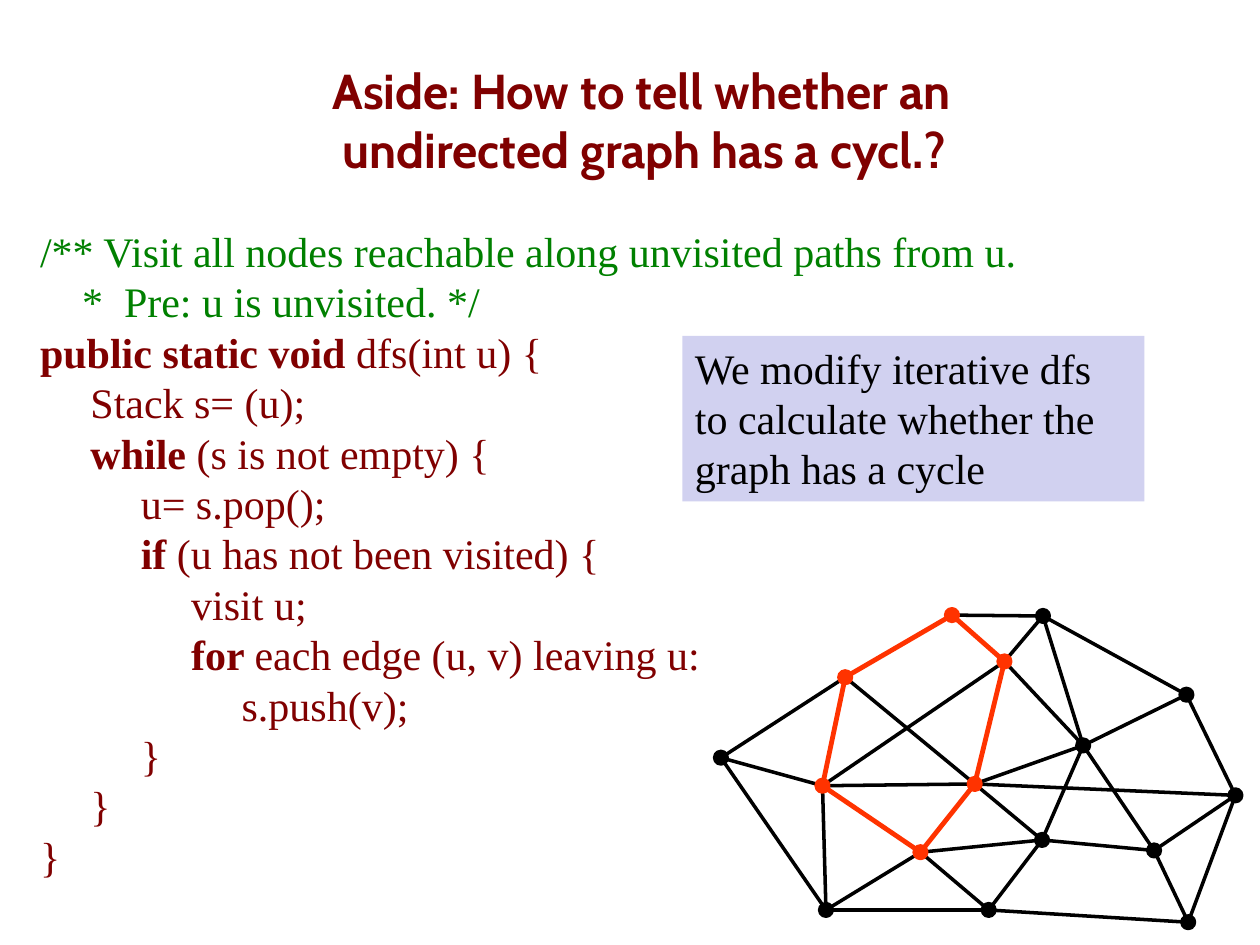
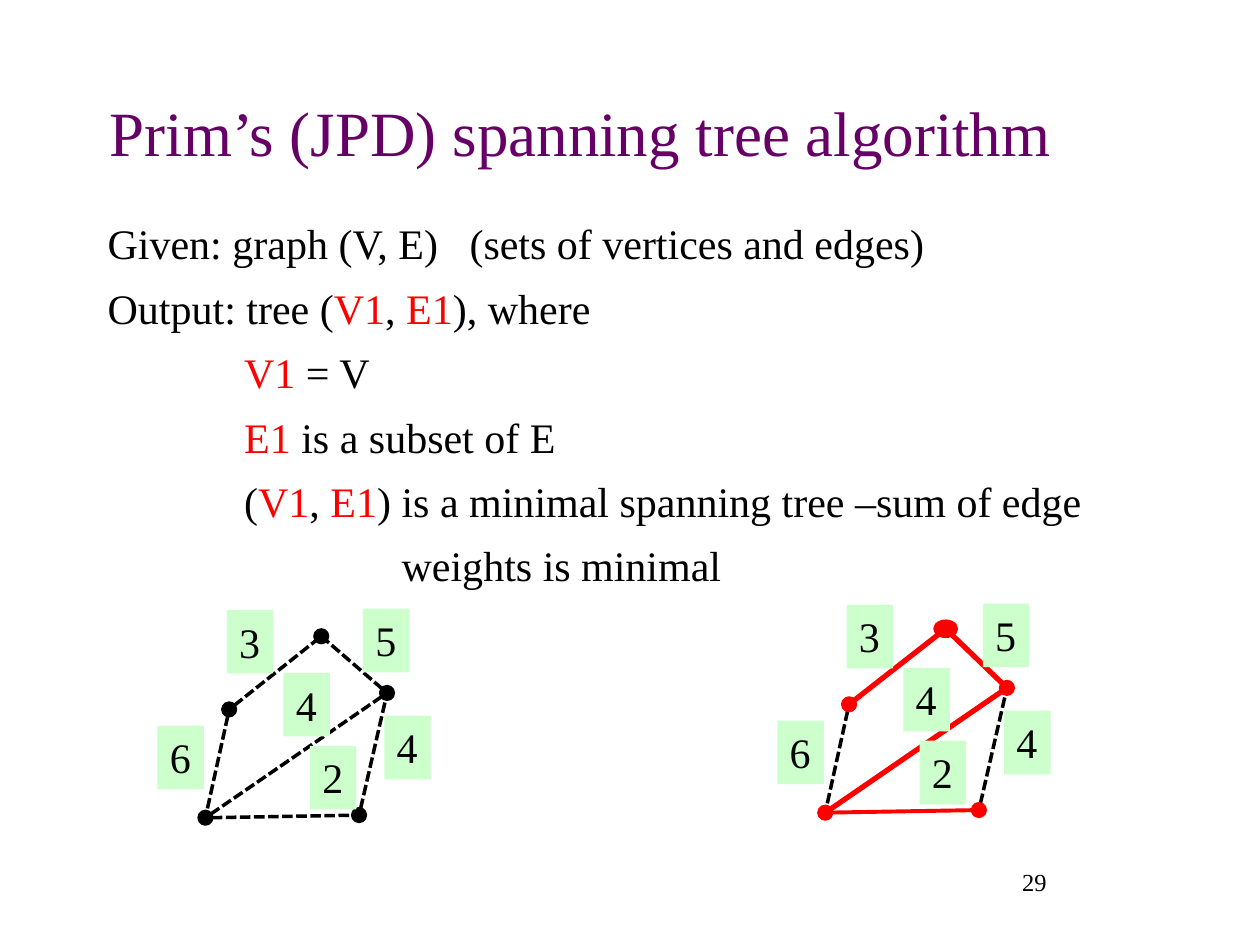
from math import hypot

from pptx import Presentation
from pptx.dml.color import RGBColor
from pptx.enum.dml import MSO_LINE
from pptx.enum.shapes import MSO_CONNECTOR, MSO_SHAPE
from pptx.enum.text import MSO_ANCHOR, MSO_AUTO_SIZE, PP_ALIGN
from pptx.oxml.xmlchemy import OxmlElement
from pptx.util import Pt

BLACK = RGBColor(0x00, 0x00, 0x00)
RED = RGBColor(0xFF, 0x00, 0x00)
ORANGE = RGBColor(0xFF, 0x33, 0x00)
MAROON = RGBColor(0x80, 0x00, 0x00)
GREEN = RGBColor(0x00, 0x80, 0x00)
PURPLE = RGBColor(0x66, 0x00, 0x66)
LAVENDER = RGBColor(0xD1, 0xD1, 0xF0)
MINT = RGBColor(0xCC, 0xFF, 0xCC)

SERIF = "Times New Roman"
BOX_MARGINS = {"margin_left": Pt(4.5), "margin_top": Pt(4.5),
               "margin_right": Pt(7.2), "margin_bottom": Pt(4.5),
               "word_wrap": True, "auto_size": MSO_AUTO_SIZE.NONE}
DOT = 7.2


def write(paragraph, runs, color=BLACK, left=0, hanging=0, **font_format):
    """Fill a paragraph with (text, bold, colour) runs and set its indent."""
    properties = paragraph._p.get_or_add_pPr()
    properties.set("marL", str(Pt(left)))
    properties.set("indent", str(Pt(hanging)))
    for text, bold, run_color in runs:
        run = paragraph.add_run()
        run.text = text
        settings = {"name": SERIF, "size": Pt(24), "bold": bold} | font_format
        for attribute, value in settings.items():
            setattr(run.font, attribute, value)
        run.font.color.rgb = run_color or color


def draw_graph(slide, nodes, edges):
    """Nodes map a letter to (x, y, colour, width, height); edges are
    (letter pair, colour, line width, dash) and stop at the rim of a node."""
    for (start, end), color, width, dash in edges:
        x1, y1 = nodes[start][:2]
        x2, y2 = nodes[end][:2]
        share = DOT / 2 / hypot(x2 - x1, y2 - y1)
        dx, dy = (x2 - x1) * share, (y2 - y1) * share
        edge = slide.shapes.add_connector(
            MSO_CONNECTOR.STRAIGHT, Pt(x1 + dx), Pt(y1 + dy), Pt(x2 - dx), Pt(y2 - dy))
        edge.line.color.rgb = color
        edge.line.width = Pt(width)
        if dash:
            edge.line.dash_style = dash
        edge._element.spPr.append(OxmlElement("a:effectLst"))
    for x, y, color, width, height in nodes.values():
        node = slide.shapes.add_shape(
            MSO_SHAPE.OVAL, Pt(x - width / 2), Pt(y - height / 2), Pt(width), Pt(height))
        node.shadow.inherit = False
        node.fill.solid()
        node.fill.fore_color.rgb = color
        node.line.color.rgb = color
        node.line.width = Pt(2)


presentation = Presentation()
presentation.slide_width = Pt(720)
presentation.slide_height = Pt(540)
content_layout, title_layout = presentation.slide_layouts[1], presentation.slide_layouts[5]

# Titles
TITLES = [
    (title_layout, (48.2, 36, 642.2, 64.8), 10, MAROON,
     ["Aside: How to tell whether an", "undirected graph has a cycl.?"],
     {"name": "Cabin", "size": Pt(28), "bold": True}),
    (content_layout, (54, 30.2, 558, 90), 7.2, PURPLE,
     ["Prim’s (JPD) spanning tree algorithm"], {"size": Pt(36)}),
]
slides = []
for layout, place, right_margin, color, lines, font_format in TITLES:
    slide = presentation.slides.add_slide(layout)
    slides.append(slide)
    title = slide.shapes.title
    title.left, title.top, title.width, title.height = map(Pt, place)
    frame_format = BOX_MARGINS | {"margin_right": Pt(right_margin),
                                  "vertical_anchor": MSO_ANCHOR.MIDDLE}
    for attribute, value in frame_format.items():
        setattr(title.text_frame, attribute, value)
    paragraph = title.text_frame.paragraphs[0]
    paragraph.alignment = PP_ALIGN.CENTER
    for number, line in enumerate(lines):
        if number:
            paragraph.add_line_break()
        write(paragraph, [(line, False, None)], color, 3, -3, **font_format)
cycle_slide, prim_slide = slides

# Depth-first search code: indent, bold keyword, rest of the line
TAB = 28.8
CODE = [
    (0, "public static void ", "dfs(int u) {"),
    (1, "", "Stack s= (u);"),
    (1, "while", " (s is not empty) {"),
    (2, "", "u= s.pop();"),
    (2, "if", " (u has not been visited) {"),
    (3, "", "visit u;"),
    (3, "for ", "each edge (u, v) leaving u:"),
    (4, "", "s.push(v);"),
    (2, "", "}"),
    (1, "", "}"),
    (0, "", "}"),
]
code_frame = cycle_slide.shapes.add_textbox(Pt(15.8), Pt(125.3), Pt(651.6), Pt(414.7)).text_frame
code_frame.word_wrap = True
write(code_frame.paragraphs[0],
      [("/** Visit all nodes reachable along unvisited paths from u.", False, GREEN)])
write(code_frame.add_paragraph(), [("*  Pre: u is unvisited. */", False, GREEN)], left=24)
for level, keyword, rest in CODE:
    runs = [(text, bold, MAROON) for text, bold in ((keyword, True), (rest, False)) if text]
    write(code_frame.add_paragraph(), runs, left=level * TAB)

# Graph with its cycle marked
CYCLE_NODES = "BCEFGH"
CYCLE_EDGES = "CB CE EG GH FH FB"
OTHER_EDGES = ("AC DE GK IK KL LN KM HJ MO MP CH FJ BG AB AD CD DI EK HL "
               "JN LM IP OP NO JL GL EI GO CG")
CENTERS = {
    "A": (412, 433), "B": (483, 387), "C": (470, 449), "D": (472, 520),
    "E": (526, 487), "F": (544, 351.5), "G": (557, 448), "H": (574, 378),
    "I": (565, 520), "J": (596, 352), "K": (595.5, 480), "L": (619, 426),
    "M": (659.5, 486), "N": (678, 397), "O": (706, 454.5), "P": (679, 527),
}
nodes = {letter: (x, y, ORANGE if letter in CYCLE_NODES else BLACK, DOT, DOT)
         for letter, (x, y) in CENTERS.items()}
edges = [(pair, BLACK, 2, None) for pair in OTHER_EDGES.split()]
edges += [(pair, ORANGE, 2.75, None) for pair in CYCLE_EDGES.split()]
draw_graph(cycle_slide, nodes, edges)

callout = cycle_slide.shapes.add_textbox(Pt(390), Pt(192), Pt(264), Pt(94.5))
callout.fill.solid()
callout.fill.fore_color.rgb = LAVENDER
callout.text_frame.word_wrap = True
write(callout.text_frame.paragraphs[0],
      [("We modify iterative dfs to calculate whether the graph has a cycle", False, None)])

# Definition of the spanning tree: left indent and runs
V1, E1 = ("V1", False, RED), ("E1", False, RED)
COMMA = (", ", False, None)
DEFINITION = [
    (3, [("Given: graph (V, E)   (sets of vertices and edges)", False, None)]),
    (3, [("Output: tree (", False, None), V1, COMMA, E1, ("), where", False, None)]),
    (81, [V1, (" = V", False, None)]),
    (81, [E1, (" is a subset of E", False, None)]),
    (81, [("(", False, None), V1, COMMA, E1,
          (") is a minimal spanning tree –sum of edge", False, None)]),
    (171, [("weights is minimal", False, None)]),
]
body = prim_slide.placeholders[1]
body.left, body.top, body.width, body.height = Pt(54), Pt(120), Pt(612), Pt(384)
for attribute, value in BOX_MARGINS.items():
    setattr(body.text_frame, attribute, value)
for number, (left, runs) in enumerate(DEFINITION):
    paragraph = body.text_frame.add_paragraph() if number else body.text_frame.paragraphs[0]
    paragraph.space_before = Pt(8)
    write(paragraph, runs, left=left)
    paragraph._p.pPr.append(OxmlElement("a:buNone"))

page_number = prim_slide.shapes.add_textbox(Pt(579.6), Pt(491.8), Pt(23), Pt(25.9))
for attribute, value in {"margin_left": 0, "margin_right": 0, "word_wrap": False}.items():
    setattr(page_number.text_frame, attribute, value)
page_number.text_frame.paragraphs[0].alignment = PP_ALIGN.CENTER
write(page_number.text_frame.paragraphs[0], [("29", False, None)], size=Pt(14))

# Weighted graph on the left, its spanning tree on the right
DASH = MSO_LINE.SQUARE_DOT
VERTICES = {"P": (131, 405.4), "Q": (117.4, 467.3), "R": (205.2, 465.8),
            "S": (221.2, 396), "T": (183.6, 363.6)}
WEIGHTS = [("3", 129.6, 348.5), ("5", 207.4, 347.8), ("4", 219.6, 409),
           ("6", 90, 414.7), ("4", 162, 384.5), ("2", 177.1, 426.2)]
given_edges = [(pair, BLACK, 2, DASH) for pair in ("PQ", "RS", "ST", "PT", "QS", "QR")]
tree_edges = given_edges[:2] + [(pair, RED, 3, None) for pair in ("ST", "PT", "QS")]
tree_edges.append(("QR", RED, 2.25, None))

for shift_x, shift_y, color, edges in ((0, 0, BLACK, given_edges),
                                       (354.2, -2.9, RED, tree_edges)):
    nodes = {letter: (x + shift_x, y + shift_y, color, DOT, DOT)
             for letter, (x, y) in VERTICES.items()}
    if color == RED:
        nodes["T"] = (540.4, 359.3, RED, 12.2, 8.6)
    draw_graph(prim_slide, nodes, edges)
    for weight, x, y in WEIGHTS:
        if weight == "2" and color == RED:
            x -= 5.8
        label = prim_slide.shapes.add_textbox(
            Pt(x + shift_x), Pt(y + shift_y), Pt(26.6), Pt(36.4))
        label.fill.solid()
        label.fill.fore_color.rgb = MINT
        label.text_frame.word_wrap = False
        write(label.text_frame.paragraphs[0], [(weight, False, None)])

presentation.save("out.pptx")
